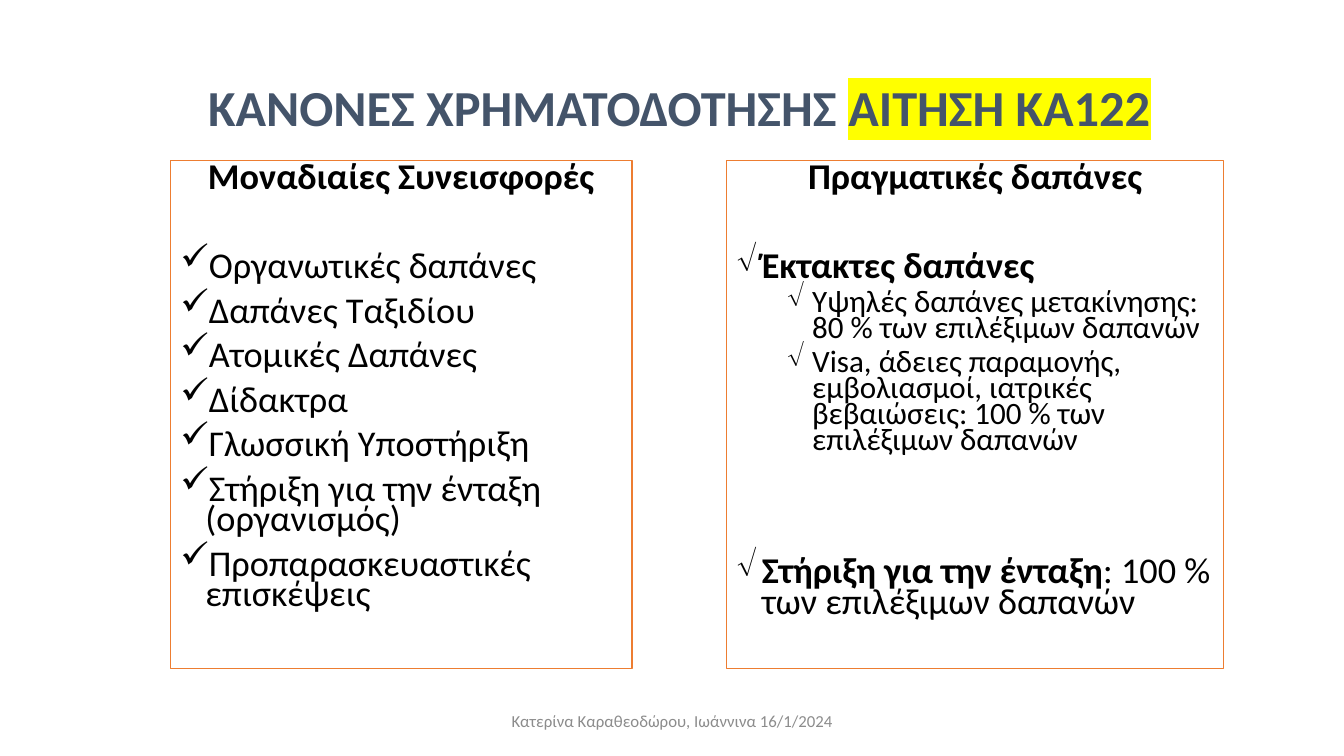
from lxml import etree
from pptx import Presentation
from pptx.dml.color import RGBColor
from pptx.enum import shapes, text
from pptx.oxml import ns
from pptx.util import Pt


def style(font, size, color, bold=False):
    font.name = "Calibri"
    font.size = Pt(size)
    font.bold = bold
    font.color.rgb = RGBColor.from_string(color)


def add_bullet(paragraph, mark, indent):
    """Hang the mark 18 pt to the left of the text, which starts at indent."""
    props = paragraph._p.get_or_add_pPr()
    props.set("marL", str(Pt(indent)))
    props.set("indent", str(Pt(-18)))
    etree.SubElement(props, ns.qn("a:buChar")).set("char", mark)


deck = Presentation()
deck.slide_width, deck.slide_height = Pt(960), Pt(540)
slide = deck.slides.add_slide(deck.slide_layouts[5])

title = slide.shapes.title
title.left, title.top, title.width, title.height = Pt(121.7), Pt(40), Pt(727.2), Pt(77)
title.text_frame.vertical_anchor = text.MSO_ANCHOR.MIDDLE
heading = title.text_frame.paragraphs[0]
heading.alignment = text.PP_ALIGN.CENTER
heading.line_spacing = 0.9
style(heading.font, 36, "44546A", True)
heading.add_run().text = "ΚΑΝΟΝΕΣ ΧΡΗΜΑΤΟΔΟΤΗΣΗΣ "
application = heading.add_run()
application.text = "ΑΙΤΗΣΗ ΚΑ122"
highlight = etree.SubElement(application._r.get_or_add_rPr(), ns.qn("a:highlight"))
etree.SubElement(highlight, ns.qn("a:srgbClr")).set("val", "FFFF00")

# Each item: level, space before, bold part, regular part
unit_costs = [
    (0, 42 if number == 0 else 10, "", item)
    for number, item in enumerate([
        "Οργανωτικές δαπάνες",
        "Δαπάνες Ταξιδίου",
        "Ατομικές Δαπάνες",
        "Δίδακτρα",
        "Γλωσσική Υποστήριξη",
        "Στήριξη για την ένταξη (οργανισμός)",
        "Προπαρασκευαστικές επισκέψεις",
    ])
]
real_costs = [
    (0, 42, "Έκτακτες δαπάνες", ""),
    (1, 5, "", "Υψηλές δαπάνες μετακίνησης: 80 % των επιλέξιμων δαπανών"),
    (1, 5, "", "Visa, άδειες παραμονής, εμβολιασμοί, ιατρικές βεβαιώσεις: "
               "100 % των επιλέξιμων δαπανών"),
    (0, 74, "Στήριξη για την ένταξη", ": 100 % των επιλέξιμων δαπανών"),
]
columns = [
    (121.7, 329.8, "Μοναδιαίες Συνεισφορές", "✓", unit_costs),
    (519.1, 355, "Πραγματικές δαπάνες", "√", real_costs),
]

for left, width, name, mark, items in columns:
    panel = slide.shapes.add_shape(
        shapes.MSO_SHAPE.RECTANGLE, Pt(left), Pt(114.5), Pt(width), Pt(362.9))
    panel.shadow.inherit = False
    panel.fill.solid()
    panel.fill.fore_color.rgb = RGBColor.from_string("FFFFFF")
    panel.line.color.rgb = RGBColor.from_string("ED7D31")
    panel.line.width = Pt(1)
    frame = panel.text_frame
    frame.word_wrap = True
    frame.vertical_anchor = text.MSO_ANCHOR.TOP
    column_head = frame.paragraphs[0]
    column_head.text = name
    column_head.alignment = text.PP_ALIGN.CENTER
    column_head.line_spacing = 0.7
    style(column_head.font, 25.9, "000000", True)
    for level, gap, strong, plain in items:
        entry = frame.add_paragraph()
        entry.level = level
        entry.alignment = text.PP_ALIGN.LEFT
        entry.line_spacing = 0.7
        entry.space_before = Pt(gap)
        add_bullet(entry, mark, 18 + 36 * level)
        style(entry.font, 22.2 if level else 25.9, "000000")
        for part, bold in ((strong, True), (plain, False)):
            if part:
                run = entry.add_run()
                run.text = part
                run.font.bold = bold

footer = slide.shapes.add_textbox(Pt(318.2), Pt(500.4), Pt(324), Pt(28.8)).text_frame
footer.word_wrap = True
footer.vertical_anchor = text.MSO_ANCHOR.MIDDLE
credit = footer.paragraphs[0]
credit.text = "Κατερίνα Καραθεοδώρου, Ιωάννινα 16/1/2024"
credit.alignment = text.PP_ALIGN.CENTER
credit.space_after = Pt(6)
style(credit.font, 12, "8C8C8C")

deck.save("out.pptx")
